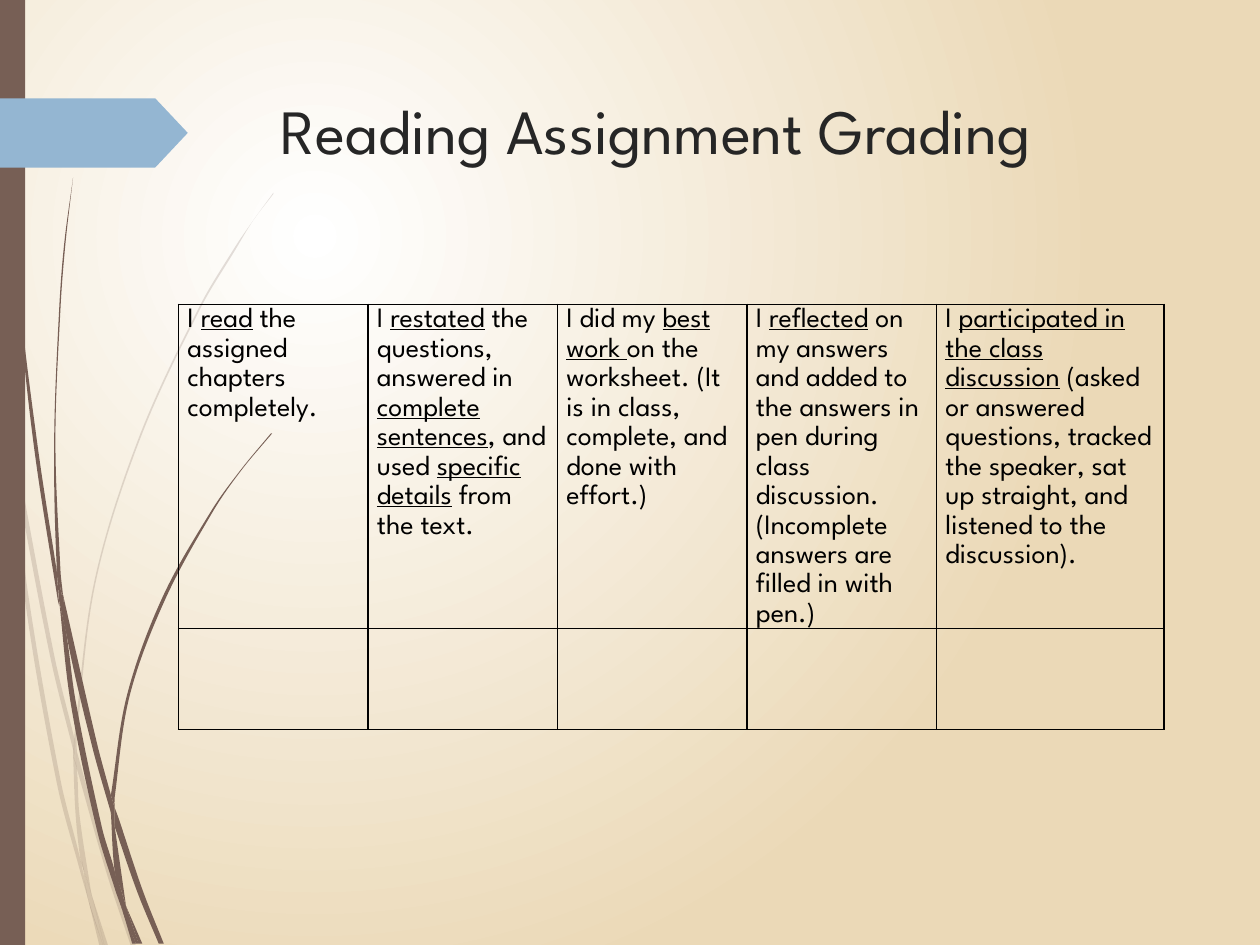
from math import dist

from lxml.etree import SubElement
from pptx import Presentation
from pptx.dml.color import RGBColor
from pptx.enum.shapes import MSO_SHAPE
from pptx.enum.text import MSO_ANCHOR, PP_ALIGN
from pptx.oxml.ns import qn
from pptx.util import Inches, Pt

FONT = "League Spartan"
BROWN, BLUE, BLACK = "775F55", "94B6D2", "000000"
COLS, ROWS = 100, 75  # grid over the slide, one cell is 0.1 inch
CELL = Inches(0.1)

# Each piece of grass has two curved sides, in grid cells
PALE = [
    ([(0, 28.2), (0.6, 32.2), (0.8, 35)], [(0.7, 34.4), (0, 29.9)]),
    ([(1, 34.5), (4.3, 52), (5.9, 58.6)], [(5.9, 59.9), (4, 52.2), (1.2, 37.6)]),
    ([(6.1, 59.6), (6.4, 60.7), (8.8, 69.2), (10.8, 75.1)],
     [(10.4, 75.1), (8.5, 69.4), (6.1, 61)]),
    ([(7.3, 71.1), (8.6, 75.1)], [(8.3, 75.1)]),
    ([(0.8, 35), (1.2, 37.6), (2.2, 46.9), (4.8, 61.9), (6.4, 68.3), (7, 71.4)],
     [(6.4, 69.3), (4.5, 62.1), (1.9, 47), (0.8, 35)]),
    ([(5.8, 59.9), (6.1, 61), (6.3, 64.6), (7.2, 70.6), (7.3, 71.1)],
     [(6.7, 69.2), (6.4, 68.3), (6, 64.6), (5.8, 59.9)]),
    ([(21.7, 15.3), (20.1, 17.5), (18.6, 19.7), (15.8, 24.4), (11, 34.8), (7.5, 46.1),
      (5.9, 58.4), (5.9, 58.6)],
     [(6.1, 59.6), (6.1, 58.4), (7.6, 46.2), (11.1, 34.9), (15.9, 24.5), (18.7, 19.8),
      (20.1, 17.5), (21.7, 15.4)]),
    ([(7, 71.4), (8.2, 75.1)], [(7.9, 75.1)]),
    ([(6.1, 61), (6.1, 59.6)], [(5.9, 58.6), (5.8, 59.9)]),
    ([(6.5, 68.3), (7, 71.4), (8.2, 75.1)], [(8.3, 75.1), (7.3, 71.1), (6.7, 69.2)]),
]
DARK = [
    ([(0.2, 0), (0.5, 11), (1.4, 23.3), (2.7, 35.5), (4.6, 47.7), (4.7, 48.1)],
     [(4.5, 45.3), (3, 35.5), (1.5, 23.2), (0.6, 10.9), (0.3, 0)]),
    ([(5, 47.2), (7.7, 59), (8.8, 63.1)], [(8.8, 64.5), (7.3, 59.2), (5.3, 50.5), (5, 47.2)]),
    ([(9.1, 64.1), (9.4, 64.9), (11.3, 70.6), (13, 74.9)],
     [(12.6, 74.9), (10.9, 70.8), (9.1, 65.6)]),
    ([(4.7, 47.7), (5.3, 50.5), (6, 55.6), (8.1, 65.7), (9.1, 69.1), (9.7, 72.2)],
     [(9.2, 70.8), (7.7, 65.9), (5.6, 55.7), (4.7, 47.7)]),
    ([(5.8, 14.1), (5.1, 19.3), (4.7, 24.5), (4.3, 34.9), (4.5, 44.9), (4.9, 47.2)],
     [(5, 47.2), (4.8, 45.3), (4.4, 34.9), (4.8, 24.5), (5.2, 19.3), (5.8, 14.1)]),
    ([(10, 71.9), (11, 74.9)], [(11.3, 74.9)]),
    ([(4.5, 44.9), (4.9, 47.2), (5, 47.2), (5.3, 50.5)], [(4.7, 47.7), (4.5, 45.3)]),
    ([(21.5, 34.4), (19.1, 37.3), (16.8, 40.5), (12.9, 47.4), (10.1, 55.1), (8.8, 63.1)],
     [(9.1, 64.1), (9.1, 63.3), (10.3, 55.2), (13.1, 47.6), (16.9, 40.6), (19.1, 37.4),
      (21.6, 34.4)]),
    ([(9.7, 72.2), (10.5, 74.9)], [(10.8, 74.9)]),
    ([(8.8, 64.5), (9.1, 69.1), (9.6, 70.6), (10, 71.9)],
     [(9.1, 65.6), (9, 65.1), (8.8, 64.5)]),
    ([(8.8, 63.1), (8.8, 64.5)], [(9.1, 65.6), (9.1, 64.1)]),
    ([(9.1, 69.1), (9.7, 72.2), (10.8, 74.9)], [(11, 74.9), (10, 71.9), (9.6, 70.6)]),
]

# Pieces between bars are underlined
GOALS = [
    "I |read| the assigned chapters completely.",
    "I |restated| the questions, answered in |complete sentences|, and used "
    "|specific details| from the text.",
    "I did my |best work |on the worksheet. (It is in class, complete, and done with effort.)",
    "I |reflected| on my answers and added to the answers in pen during class discussion. "
    "(Incomplete answers are filled in with pen.)",
    "I |participated in the class discussion| (asked or answered questions, tracked the "
    "speaker, sat up straight, and listened to the discussion).",
]


def grid(*cells):
    return [round(n * CELL) for n in cells]


def paint(fill, color, alpha=100):
    fill.solid()
    fill.fore_color.rgb = RGBColor.from_string(color)
    if alpha < 100:
        tint = fill._xPr.find(".//" + qn("a:srgbClr"))
        SubElement(tint, qn("a:alpha"), val=str(alpha * 1000))


def write(frame, text, size=16, color=BLACK, space=None):
    """Fill the frame with text, underlining every piece between bars."""
    frame.word_wrap = True
    para = frame.paragraphs[0]
    para.alignment = PP_ALIGN.LEFT
    para.line_spacing = space
    for i, piece in enumerate(text.split("|")):
        run = para.add_run()
        run.text = piece
        font = run.font
        font.name, font.size, font.underline = FONT, Pt(size), i % 2 == 1
        font.color.rgb = RGBColor.from_string(color)


def finish(shape, color, alpha=100):
    shape.shadow.inherit = False
    shape.line.fill.background()
    paint(shape.fill, color, alpha)


def bend(pts):
    """Return the control points of a smooth Bezier curve after its first point."""
    ends = [pts[0], *pts, pts[-1]]
    out = []
    for a, b, c, d in zip(ends, ends[1:], ends[2:], ends[3:]):
        span = dist(b, c)
        lead, tail = span / (dist(a, b) + span) / 3, span / (span + dist(c, d)) / 3
        out.append(tuple(q + (r - p) * lead for p, q, r in zip(a, b, c)))
        out.append(tuple(r - (s - q) * tail for q, r, s in zip(b, c, d)))
        out.append(c)
    return out


def blade(slide, sides, alpha):
    """Draw a closed shape whose two sides are Bezier curves."""
    down, back = sides
    outline = bend(down) + [back[0]] * 3 + bend(back)
    pen = slide.shapes.build_freeform(*grid(*down[0]))
    pen.add_line_segments([grid(*pt) for pt in outline])
    shape = pen.convert_to_shape()
    lines = shape._element.findall(".//" + qn("a:lnTo"))
    for first, *rest in zip(lines[::3], lines[1::3], lines[2::3]):
        first.tag = qn("a:cubicBezTo")
        for line in rest:
            first.append(line[0])
            line.getparent().remove(line)
    finish(shape, BROWN, alpha)


def block(slide, kind, box, color):
    shape = slide.shapes.add_shape(kind, *grid(*box))
    finish(shape, color)
    return shape


def backdrop(slide):
    fill = slide.background.fill
    fill.gradient()
    for stop, color in zip(fill.gradient_stops, ("FFFFFF", "EBD9B7")):
        stop.color.rgb = RGBColor.from_string(color)
    grad = slide._element.find(".//" + qn("a:gradFill"))
    grad.remove(grad.find(qn("a:lin")))
    ring = SubElement(grad, qn("a:path"), path="circle")
    SubElement(ring, qn("a:fillToRect"), l="50000", t="50000", r="100000", b="100000")


def border(cell):
    props = cell._tc.get_or_add_tcPr()
    for side in ("lnL", "lnR", "lnT", "lnB"):
        line = SubElement(props, qn("a:" + side), w=str(Pt(1)))
        SubElement(SubElement(line, qn("a:solidFill")), qn("a:srgbClr"), val=BLACK)


def rubric(slide, left, top, widths, heights):
    box = grid(left, top, sum(widths), sum(heights))
    table = slide.shapes.add_table(len(heights), len(widths), *box).table
    table.first_row = table.horz_banding = False
    for col, wide in zip(table.columns, grid(*widths)):
        col.width = wide
    for row, high in zip(table.rows, grid(*heights)):
        row.height = high
    for cell in table.iter_cells():
        border(cell)
        cell.fill.background()
        cell.margin_left = cell.margin_right = Inches(0.07)
        cell.margin_top = cell.margin_bottom = 0
    for cell, goal in zip(table.rows[0].cells, GOALS):
        write(cell.text_frame, goal, space=1.15)


def heading(slide, text, box):
    title = slide.shapes.title
    title.left, title.top, title.width, title.height = grid(*box)
    frame = title.text_frame
    frame.vertical_anchor = MSO_ANCHOR.TOP
    write(frame, text, size=36, color="262626")


def main():
    deck = Presentation()
    deck.slide_width, deck.slide_height = grid(COLS, ROWS)
    slide = deck.slides.add_slide(deck.slide_layouts[5])
    backdrop(slide)
    for group, alpha in ((PALE, 20), (DARK, 100)):
        for sides in group:
            blade(slide, sides, alpha)
    block(slide, MSO_SHAPE.RECTANGLE, (0, 0, 2, ROWS), BROWN)
    arrow = block(slide, MSO_SHAPE.PENTAGON, (0, 7.8, 14.9, 5.5), BLUE)
    arrow.adjustments[0] = 0.47
    heading(slide, "Reading Assignment Grading", (21.3, 6.8, 72.1, 14))
    rubric(slide, 14.18, 24.16, [15.04] * 4 + [18.06], [25.7, 8])
    deck.save("out.pptx")


if __name__ == "__main__":
    main()
